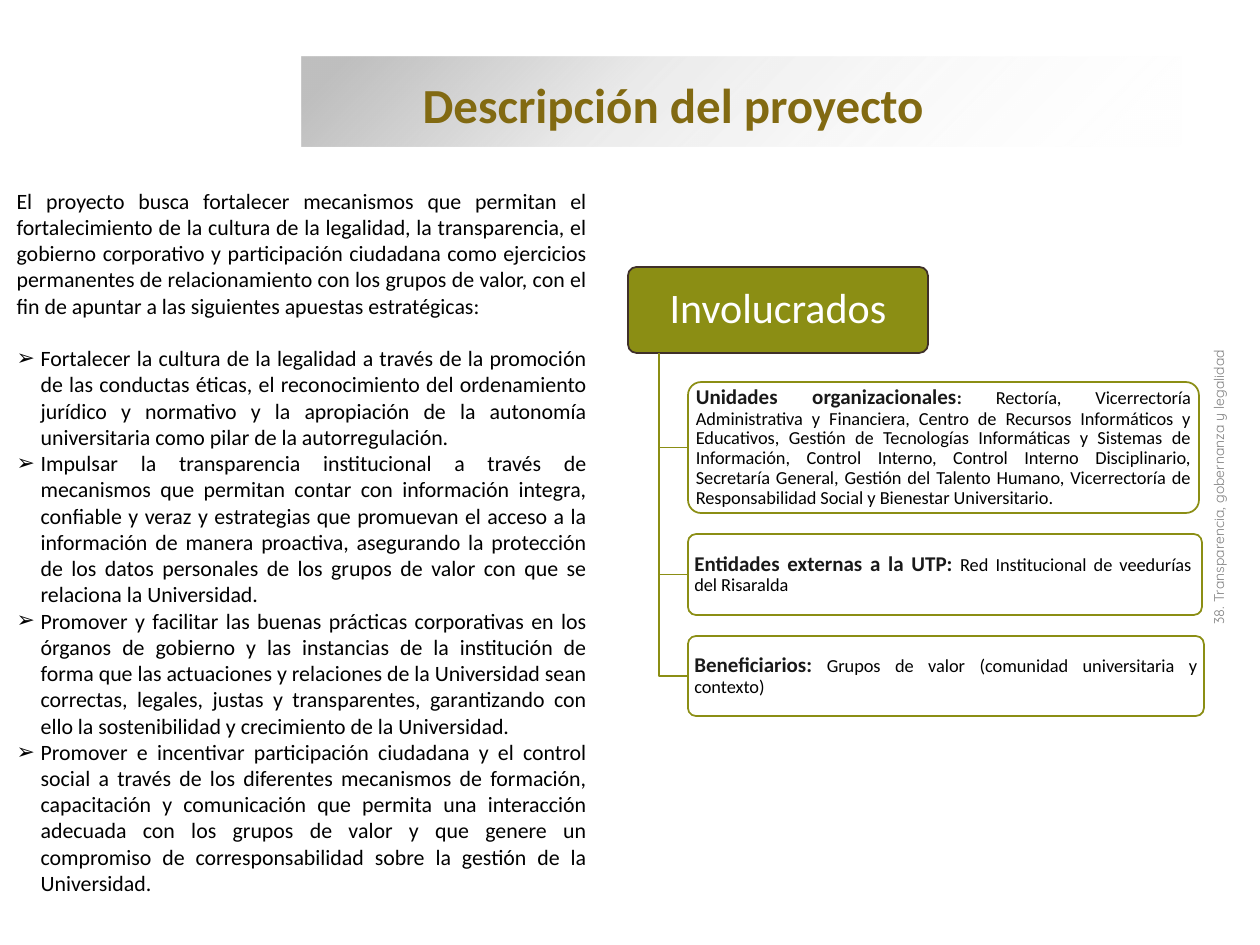
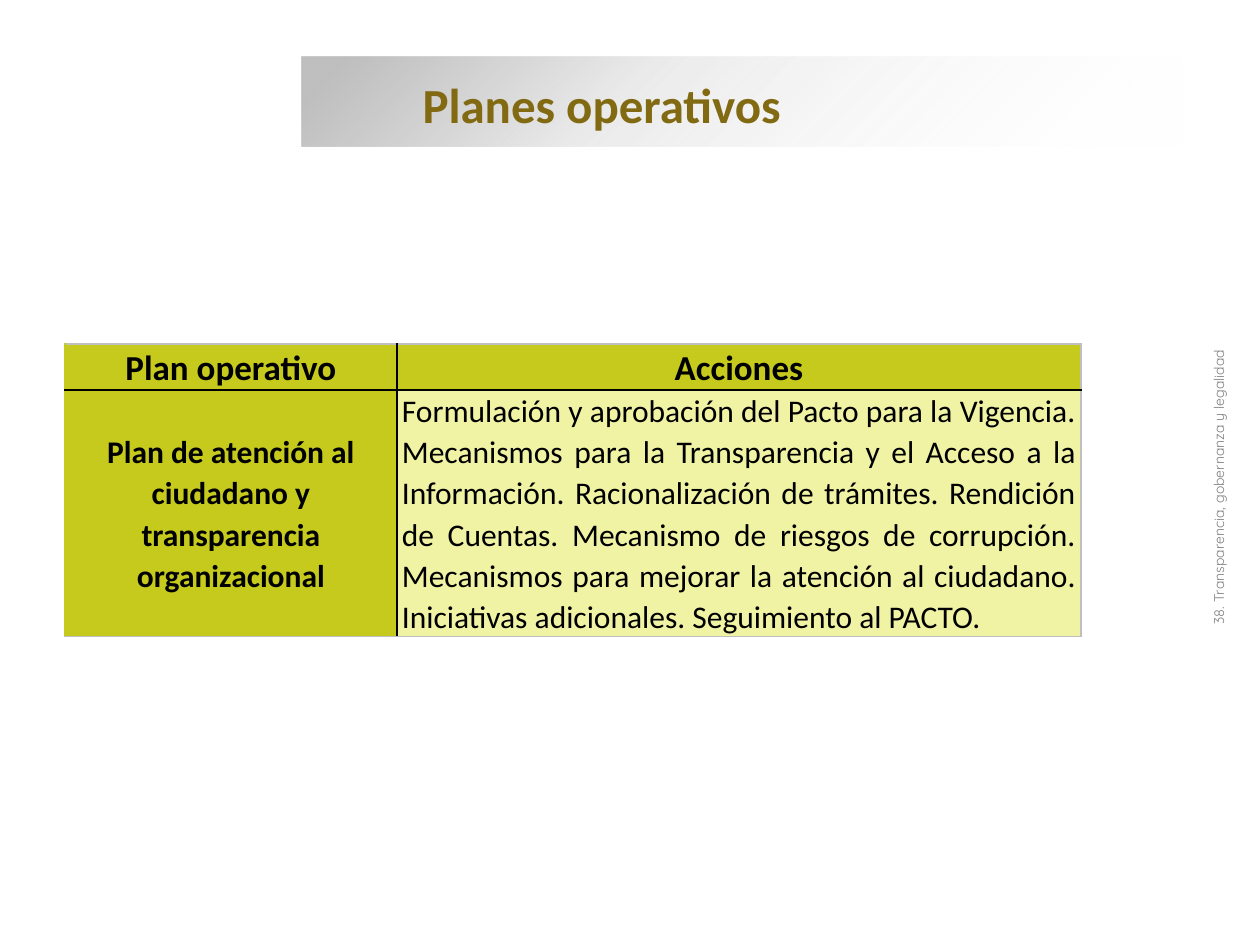
from dataclasses import dataclass

from lxml.etree import SubElement
from pptx import Presentation
from pptx.dml.color import RGBColor
from pptx.enum.shapes import MSO_SHAPE
from pptx.enum.text import MSO_ANCHOR, MSO_AUTO_SIZE, PP_ALIGN
from pptx.oxml import parse_xml
from pptx.oxml.ns import nsdecls, qn
from pptx.util import Emu, Pt

EMU_PER_PX = 914400 / 126


@dataclass(frozen=True)
class Theme:
    font: str = "Calibri"
    caption_font: str = "Quicksand"
    gold: str = "826A12"
    olive: str = "8B8E14"
    brown: str = "3F3029"
    lime: str = "C6CA1C"
    pale_lime: str = "F0F2A4"
    band_gray: str = "BFBFBF"
    caption_gray: str = "808080"
    ink: str = "191919"
    black: str = "000000"
    white: str = "FFFFFF"
    title_size: float = 28
    head_size: float = 24
    table_head_size: float = 20
    table_size: float = 18
    body_size: float = 12.5
    card_label_size: float = 12
    card_size: float = 10.5
    caption_size: float = 8


THEME = Theme()

# Content
CAPTION = "38. Transparencia, gobernanza y legalidad"
PROJECT_TITLE = "Descripción del proyecto"
PLANS_TITLE = "Planes operativos"
INTRODUCTION = (
    "El proyecto busca fortalecer mecanismos que permitan el fortalecimiento de la cultura de la "
    "legalidad, la transparencia, el gobierno corporativo y participación ciudadana como ejercicios "
    "permanentes de relacionamiento con los grupos de valor, con el fin de apuntar a las siguientes "
    "apuestas estratégicas:"
)
STRATEGIES = [
    "Fortalecer la cultura de la legalidad a través de la promoción de las conductas éticas, el "
    "reconocimiento del ordenamiento jurídico y normativo y la apropiación de la autonomía "
    "universitaria como pilar de la autorregulación.",
    "Impulsar la transparencia institucional a través de mecanismos que permitan contar con "
    "información integra, confiable y veraz y estrategias que promuevan el acceso a la información "
    "de manera proactiva, asegurando la protección de los datos personales de los grupos de valor "
    "con que se relaciona la Universidad.",
    "Promover y facilitar las buenas prácticas corporativas en los órganos de gobierno y las "
    "instancias de la institución de forma que las actuaciones y relaciones de la Universidad sean "
    "correctas, legales, justas y transparentes, garantizando con ello la sostenibilidad y "
    "crecimiento de la Universidad.",
    "Promover e incentivar participación ciudadana y el control social a través de los diferentes "
    "mecanismos de formación, capacitación y comunicación que permita una interacción adecuada con "
    "los grupos de valor y que genere un compromiso de corresponsabilidad sobre la gestión de la "
    "Universidad.",
]
INVOLVED_HEAD = "Involucrados"
# label, separator, detail, card width, card height, right inset
INVOLVED = [
    ("Unidades organizacionales", ": ",
     "Rectoría, Vicerrectoría Administrativa y Financiera, Centro de Recursos Informáticos y "
     "Educativos, Gestión de Tecnologías Informáticas y Sistemas de Información, Control Interno, "
     "Control Interno Disciplinario, Secretaría General, Gestión del Talento Humano, Vicerrectoría "
     "de Responsabilidad Social y Bienestar Universitario.", 511, 131, 4),
    ("Entidades externas a la UTP:", " ",
     "Red Institucional de veedurías del Risaralda", 514, 81, 8),
    ("Beneficiarios:", " ",
     "Grupos de valor (comunidad universitaria y contexto)", 516, 80, 4),
]
PLAN_ROWS = [
    ("Plan operativo", "Acciones"),
    ("Plan de atención al ciudadano y transparencia organizacional",
     "Formulación y aprobación del Pacto para la Vigencia. Mecanismos para la Transparencia y el "
     "Acceso a la Información. Racionalización de trámites. Rendición de Cuentas. Mecanismo de "
     "riesgos de corrupción. Mecanismos para mejorar la atención al ciudadano. Iniciativas "
     "adicionales. Seguimiento al PACTO."),
]

# Places in px: left, top, width, height
BAND = (302, 57, 880, 90)
TITLE = (410, 68, 781, 72)
CAPTION_BOX = (914, 472, 610, 30)
BODY = (4, 181, 595, 755)
HEAD = (628, 267, 300, 86)
CARD_LEFT, CARD_TOP, CARD_GAP = 688, 382, 21
TRUNK_X = 659
BULLET_INDENT = 24
TABLE = (65, 344, 1016, 287)
COLUMN_WIDTHS = (332, 684)
ROW_HEIGHTS = (28, 67)  # least heights; the rows grow with their text


def px(*lengths):
    return [Emu(round(length * EMU_PER_PX)) for length in lengths]


def rgb(color):
    return RGBColor.from_string(color)


def set_values(target, values):
    for name, value in values.items():
        setattr(target, name, value)


def place(shape, box):
    set_values(shape, dict(zip(("left", "top", "width", "height"), px(*box))))


def set_frame(frame, anchor, insets=None):
    set_values(frame, {"word_wrap": True, "auto_size": MSO_AUTO_SIZE.NONE, "vertical_anchor": anchor})
    if insets:
        sides = ("margin_left", "margin_top", "margin_right", "margin_bottom")
        set_values(frame, dict(zip(sides, px(*insets))))


def add_run(paragraph, text, size, color=THEME.black, bold=False, font=THEME.font):
    run = paragraph.add_run()
    run.text = text
    set_values(run.font, {"name": font, "size": Pt(size), "bold": bold})
    run.font.color.rgb = rgb(color)


def set_bullet(paragraph, character=None):
    """Give a hanging bullet, or remove the inherited one."""
    properties = paragraph._p.get_or_add_pPr()
    indent = px(BULLET_INDENT)[0] if character else 0
    properties.set("marL", str(indent))
    properties.set("indent", str(-indent))
    if character:
        SubElement(properties, qn("a:buChar")).set("char", character)
    else:
        SubElement(properties, qn("a:buNone"))


def set_outline(shape, color):
    shape.shadow.inherit = False
    shape.line.color.rgb = rgb(color)
    shape.line.width = Pt(1)


def add_panel(slide, box, fill, line):
    panel = slide.shapes.add_shape(MSO_SHAPE.ROUNDED_RECTANGLE, *px(*box))
    panel.adjustments[0] = 0.1
    panel.fill.solid()
    panel.fill.fore_color.rgb = rgb(fill)
    set_outline(panel, line)
    return panel


def add_band(slide):
    band = slide.shapes.add_shape(MSO_SHAPE.RECTANGLE, *px(*BAND))
    band.shadow.inherit = False
    band.line.fill.background()
    stops = "".join(
        f'<a:gs pos="{position * 1000}"><a:srgbClr val="{color}">'
        f'<a:alpha val="{alpha * 1000}"/></a:srgbClr></a:gs>'
        for position, color, alpha in (
            (5, THEME.band_gray, 100), (37, THEME.band_gray, 31), (100, THEME.white, 0))
    )
    gradient = parse_xml(
        f'<a:gradFill {nsdecls("a")} rotWithShape="1"><a:gsLst>{stops}</a:gsLst>'
        '<a:lin ang="2700000" scaled="1"/></a:gradFill>'
    )
    band._element.spPr.find(qn("a:prstGeom")).addnext(gradient)
    slide.shapes.title._element.addprevious(band._element)


def add_slide(presentation, layout_index, title_text):
    """Start a slide with the shared band, title and side caption."""
    slide = presentation.slides.add_slide(presentation.slide_layouts[layout_index])
    add_band(slide)
    title = slide.shapes.title
    place(title, TITLE)
    set_frame(title.text_frame, MSO_ANCHOR.MIDDLE)
    paragraph = title.text_frame.paragraphs[0]
    paragraph.alignment = PP_ALIGN.LEFT
    add_run(paragraph, title_text, THEME.title_size, THEME.gold, True)

    caption = slide.shapes.add_textbox(*px(*CAPTION_BOX))
    caption.rotation = 270
    set_frame(caption.text_frame, MSO_ANCHOR.TOP)
    paragraph = caption.text_frame.paragraphs[0]
    paragraph.alignment = PP_ALIGN.CENTER
    add_run(paragraph, CAPTION, THEME.caption_size, THEME.caption_gray, font=THEME.caption_font)
    return slide


def fill_description(body):
    place(body, BODY)
    frame = body.text_frame
    set_frame(frame, MSO_ANCHOR.TOP)
    for index, text in enumerate([INTRODUCTION, *STRATEGIES]):
        paragraph = frame.add_paragraph() if index else frame.paragraphs[0]
        set_bullet(paragraph, "➢" if index else None)
        set_values(paragraph, {
            "alignment": PP_ALIGN.JUSTIFY,
            "space_before": Pt(15 if index == 1 else 0),
        })
        add_run(paragraph, text, THEME.body_size)


def add_elbow(slide, middle):
    """Draw the bent line from the head down and across to a card."""
    start, corner, end = (
        px(*point) for point in
        ((TRUNK_X, HEAD[1] + HEAD[3]), (TRUNK_X, middle), (CARD_LEFT, middle))
    )
    builder = slide.shapes.build_freeform(*start)
    builder.add_line_segments([corner, end], close=False)
    elbow = builder.convert_to_shape()
    elbow.fill.background()
    set_outline(elbow, THEME.olive)


def add_involved(slide):
    head = add_panel(slide, HEAD, THEME.olive, THEME.brown)
    set_frame(head.text_frame, MSO_ANCHOR.MIDDLE, (6, 4, 6, 4))
    paragraph = head.text_frame.paragraphs[0]
    set_values(paragraph, {"alignment": PP_ALIGN.CENTER, "line_spacing": 0.9})
    add_run(paragraph, INVOLVED_HEAD, THEME.head_size, THEME.white)

    top = CARD_TOP
    for label, separator, detail, width, height, right_inset in INVOLVED:
        add_elbow(slide, top + height / 2)
        card = add_panel(slide, (CARD_LEFT, top, width, height), THEME.white, THEME.olive)
        set_frame(card.text_frame, MSO_ANCHOR.MIDDLE, (4, 3, right_inset, 3))
        paragraph = card.text_frame.paragraphs[0]
        set_values(paragraph, {"alignment": PP_ALIGN.JUSTIFY, "line_spacing": 0.9})
        add_run(paragraph, label, THEME.card_label_size, THEME.ink, True)
        add_run(paragraph, separator, THEME.card_size, THEME.ink, True)
        add_run(paragraph, detail, THEME.card_size)
        top += height + CARD_GAP


def set_border(cell, side, color):
    border = SubElement(cell._tc.get_or_add_tcPr(), qn(f"a:ln{side}"), w=str(Pt(1)))
    fill = SubElement(border, qn("a:solidFill"))
    SubElement(fill, qn("a:srgbClr"), val=color)


def add_plans(slide):
    table_frame = slide.shapes.add_table(len(PLAN_ROWS), len(COLUMN_WIDTHS), *px(*TABLE))
    table = table_frame.table
    set_values(table, {"first_row": False, "horz_banding": False})
    for column, width in zip(table.columns, px(*COLUMN_WIDTHS)):
        column.width = width
    for row, height in zip(table.rows, px(*ROW_HEIGHTS)):
        row.height = height
    place(table_frame, TABLE)
    for row_index, texts in enumerate(PLAN_ROWS):
        for column_index, text in enumerate(texts):
            cell = table.cell(row_index, column_index)
            is_action = row_index > 0 and column_index > 0
            set_border(cell, "L", THEME.black if column_index else THEME.lime)
            set_border(cell, "R", THEME.band_gray if column_index else THEME.black)
            set_border(cell, "T", THEME.black if row_index else THEME.band_gray)
            set_border(cell, "B", THEME.band_gray if row_index else THEME.black)
            cell.fill.solid()
            cell.fill.fore_color.rgb = rgb(THEME.pale_lime if is_action else THEME.lime)
            side_margin, no_margin = px(5, 0)
            set_values(cell, {
                "margin_left": side_margin, "margin_right": side_margin,
                "margin_top": no_margin, "margin_bottom": no_margin,
                "vertical_anchor": MSO_ANCHOR.MIDDLE,
            })
            paragraph = cell.text_frame.paragraphs[0]
            set_values(paragraph, {
                "alignment": PP_ALIGN.JUSTIFY if is_action else PP_ALIGN.CENTER,
                "line_spacing": 1.07,
            })
            size = THEME.table_size if row_index else THEME.table_head_size
            add_run(paragraph, text, size, bold=not is_action)


def main():
    presentation = Presentation()
    presentation.slide_width, presentation.slide_height = px(1260, 945)
    project = add_slide(presentation, 1, PROJECT_TITLE)
    fill_description(project.placeholders[1])
    add_involved(project)
    add_plans(add_slide(presentation, 5, PLANS_TITLE))
    presentation.save("out.pptx")


if __name__ == "__main__":
    main()
